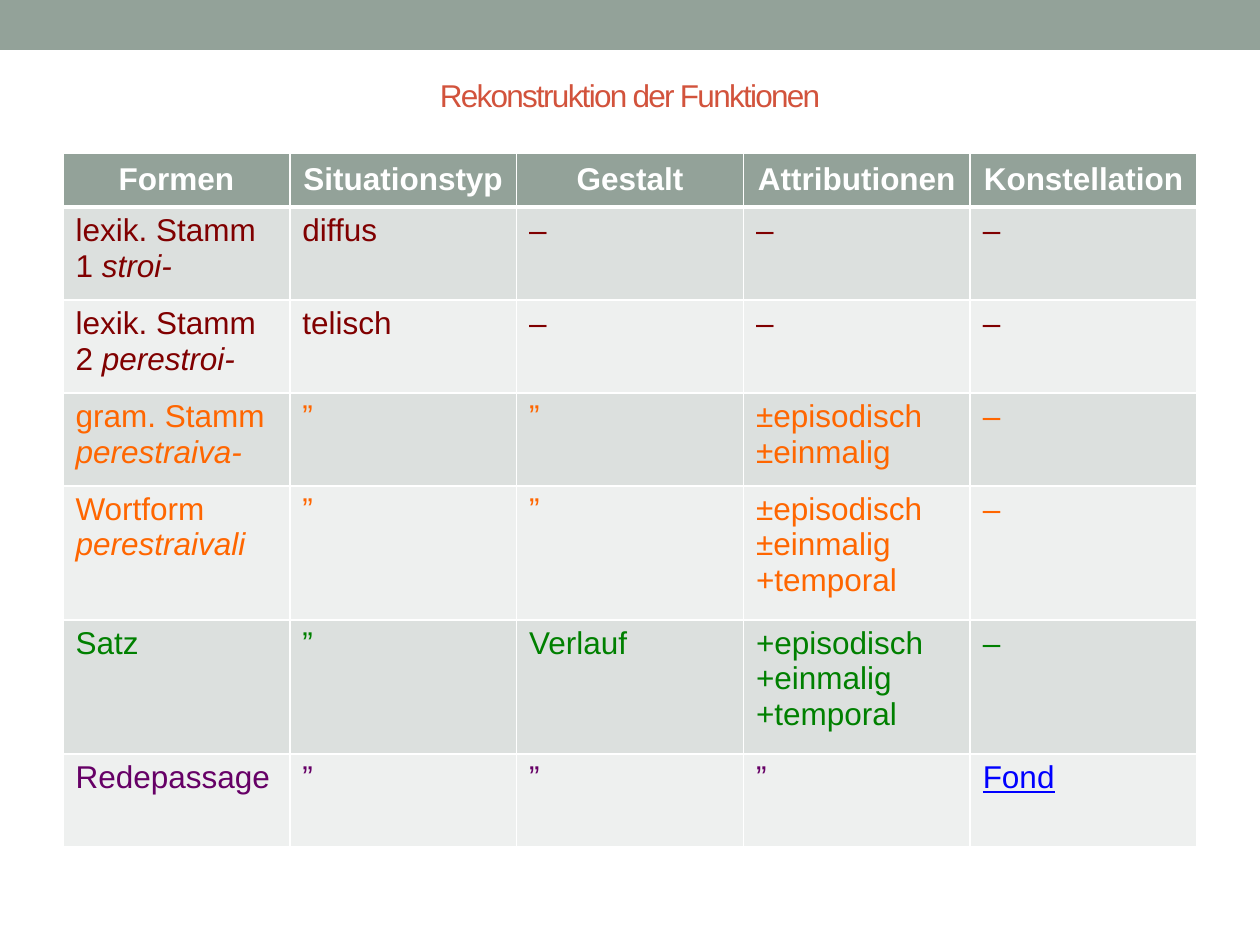
from lxml import etree
from pptx import Presentation
from pptx.dml.color import RGBColor
from pptx.enum.shapes import MSO_SHAPE
from pptx.enum.text import MSO_ANCHOR, PP_ALIGN
from pptx.oxml.ns import qn
from pptx.util import Emu, Pt

RECTANGLE = MSO_SHAPE.RECTANGLE
MIDDLE, TOP = MSO_ANCHOR.MIDDLE, MSO_ANCHOR.TOP
CENTER, LEFT = PP_ALIGN.CENTER, PP_ALIGN.LEFT
TITLE_ONLY = 5
FONT, FONT_SIZE = "Arial", 18
COLORS = {
    "sage": "93A299", "title": "D2533C", "white": "FFFFFF",
    "dark_band": "DCE0DE", "light_band": "EEF0EF",
    "lexical": "800000", "grammatical": "FF6600",
    "sentence": "008000", "passage": "660066", "link": "0000FF",
}
HEADERS = ["Formen", "Situationstyp", "Gestalt", "Attributionen", "Konstellation"]
ROWS = [
    ("lexical", 93, ("lexik. Stamm 1 ", "stroi-"), ["diffus", "–", "–", "–"]),
    ("lexical", 93, ("lexik. Stamm 2 ", "perestroi-"), ["telisch", "–", "–", "–"]),
    ("grammatical", 93, ("gram. Stamm ", "perestraiva-"),
     ["”", "”", "±episodisch\n±einmalig", "–"]),
    ("grammatical", 134, ("Wortform ", "perestraivali"),
     ["”", "”", "±episodisch\n±einmalig\n+temporal", "–"]),
    ("sentence", 134, ("Satz", ""),
     ["”", "Verlauf", "+episodisch\n+einmalig\n+temporal", "–"]),
    ("passage", 93, ("Redepassage", ""), ["”", "”", "”", "Fond"]),
]
HEADER_HEIGHT = 54


def px(length):
    """Turn pixels at 126 to the inch into EMU."""
    return Emu(round(length * 914400 / 126))


def color(name):
    """Return the named colour."""
    return RGBColor.from_string(COLORS[name])


def add_run(paragraph, text, color_name, bold=False, italic=False, underline=False):
    """Add one formatted run to a paragraph."""
    run = paragraph.add_run()
    run.text = text
    font = run.font
    font.name, font.size = FONT, Pt(FONT_SIZE)
    font.bold, font.italic, font.underline = bold, italic, underline
    font.color.rgb = color(color_name)
    return run


def set_borders(cell, bottom_width):
    """Give a cell white borders, with its own width at the bottom."""
    properties = cell._tc.get_or_add_tcPr()
    widths = {"lnL": 1, "lnR": 1, "lnT": 1, "lnB": bottom_width}
    for index, (side, width) in enumerate(widths.items()):
        line = etree.Element(qn(f"a:{side}"), w=str(Pt(width)))
        fill = etree.SubElement(line, qn("a:solidFill"))
        etree.SubElement(fill, qn("a:srgbClr"), val=COLORS["white"])
        properties.insert(index, line)


def format_cell(cell, fill_name, anchor=TOP, bottom_width=1):
    """Set the fill, anchor and borders of a cell."""
    cell.fill.solid()
    cell.fill.fore_color.rgb = color(fill_name)
    cell.vertical_anchor = anchor
    set_borders(cell, bottom_width)


def add_top_bar(slide, left, top, width, height):
    """Draw the plain band along the top edge."""
    bar = slide.shapes.add_shape(RECTANGLE, px(left), px(top), px(width), px(height))
    bar.shadow.inherit = False
    bar.fill.solid()
    bar.fill.fore_color.rgb = color("sage")
    bar.line.fill.background()


def place_title(slide, left, top, width, height):
    """Place and fill the title placeholder."""
    title = slide.shapes.title
    title.left, title.top = px(left), px(top)
    title.width, title.height = px(width), px(height)
    title.text_frame.vertical_anchor = MIDDLE
    paragraph = title.text_frame.paragraphs[0]
    paragraph.alignment = CENTER
    run = add_run(paragraph, "Rekonstruktion der Funktionen", "title")
    run.font._element.set("spc", "-100")


def fill_header(table):
    """Fill the heading row."""
    for cell, text in zip(table.rows[0].cells, HEADERS):
        format_cell(cell, "sage", MIDDLE, bottom_width=3)
        paragraph = cell.text_frame.paragraphs[0]
        paragraph.alignment = CENTER
        add_run(paragraph, text, "white", bold=True)


def fill_row(row, fill_name, color_name, form, values):
    """Fill a body row: the form with its example, then its functions."""
    for cell in row.cells:
        format_cell(cell, fill_name)
    label, example = form
    paragraph = row.cells[0].text_frame.paragraphs[0]
    add_run(paragraph, label, color_name)
    if example:
        add_run(paragraph, example, color_name, italic=True)
    for column, value in enumerate(values, start=1):
        frame = row.cells[column].text_frame
        is_link = value == "Fond"
        for index, text in enumerate(value.split("\n")):
            paragraph = frame.add_paragraph() if index else frame.paragraphs[0]
            paragraph.alignment = LEFT
            add_run(paragraph, text, "link" if is_link else color_name, underline=is_link)


def add_function_table(slide, left, top, width):
    """Build the table of forms and functions."""
    heights = [HEADER_HEIGHT] + [row[1] for row in ROWS]
    table = slide.shapes.add_table(
        len(heights), len(HEADERS), px(left), px(top), px(width), px(sum(heights))
    ).table
    for column in table.columns:
        column.width = px(width / len(HEADERS))
    for row, height in zip(table.rows, heights):
        row.height = px(height)
    fill_header(table)
    for index, (color_name, _, form, values) in enumerate(ROWS):
        band = "light_band" if index % 2 else "dark_band"
        fill_row(table.rows[index + 1], band, color_name, form, values)


def main():
    """Build and save the presentation."""
    presentation = Presentation()
    presentation.slide_width, presentation.slide_height = px(1260), px(945)
    slide = presentation.slides.add_slide(presentation.slide_layouts[TITLE_ONLY])
    add_top_bar(slide, 0, 0, 1260, 50)
    place_title(slide, 63, 50, 1134, 90)
    add_function_table(slide, 63, 153, 1134)
    presentation.save("out.pptx")


if __name__ == "__main__":
    main()
